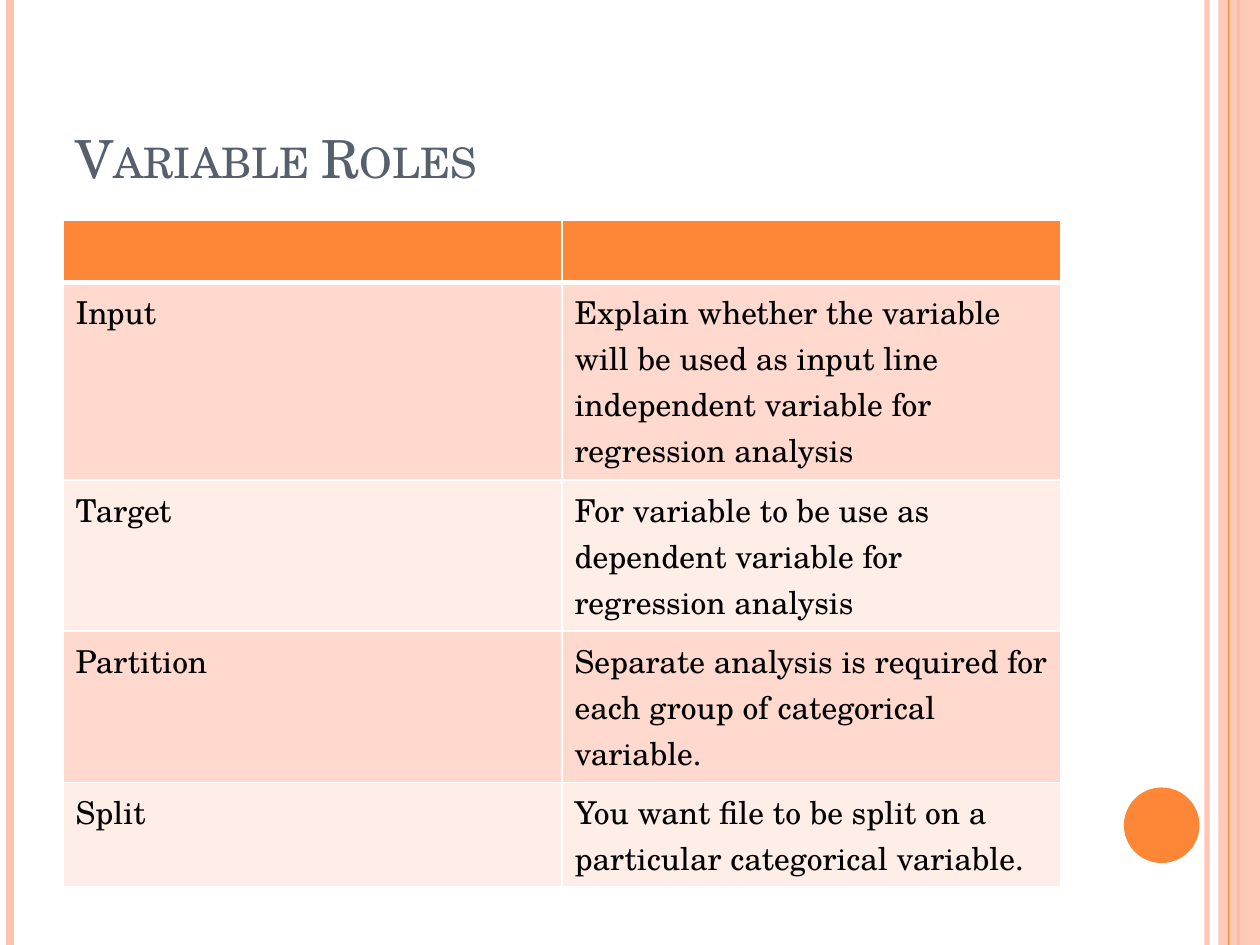
from pptx import Presentation
from pptx.dml.color import RGBColor
from pptx.enum.shapes import MSO_CONNECTOR, MSO_SHAPE
from pptx.enum.text import MSO_ANCHOR
from pptx.oxml.ns import qn
from pptx.util import Inches, Pt
from lxml import etree

STRAIGHT = MSO_CONNECTOR.STRAIGHT
RECTANGLE = MSO_SHAPE.RECTANGLE
OVAL = MSO_SHAPE.OVAL
BOTTOM = MSO_ANCHOR.BOTTOM

ORANGE = RGBColor(0xFE, 0x86, 0x37)
PEACH = RGBColor(0xFE, 0xC3, 0xAE)
BAND_DARK = RGBColor(0xFF, 0xD9, 0xCE)
BAND_LIGHT = RGBColor(0xFF, 0xED, 0xE8)
SLATE = RGBColor(0x57, 0x5F, 0x6D)
BLACK = RGBColor(0, 0, 0)
WHITE = RGBColor(0xFF, 0xFF, 0xFF)

ROLES = [
    ("Input", "Explain whether the variable will be used as input line "
              "independent variable for regression analysis"),
    ("Target", "For variable to be use as dependent variable for regression analysis"),
    ("Partition", "Separate analysis is required for each group of categorical variable."),
    ("Split", "You want file to be split on a particular categorical variable."),
]
HEADER_HEIGHT = 0.49
ROLE_HEIGHTS = [1.57, 1.2, 1.2, 0.83]


def set_alpha(element, percent):
    """Make the solid colour inside an element partly transparent."""
    color = element.find(".//" + qn("a:srgbClr"))
    etree.SubElement(color, qn("a:alpha")).set("val", str(percent * 1000))


class SlideBuilder:
    font = "TeX Gyre Schola"

    def __init__(self, page, height):
        self.page = page
        self.height = height

    def vertical_line(self, x, color, width, alpha=100):
        line = self.page.shapes.add_connector(
            STRAIGHT, Inches(x), 0, Inches(x), self.height)
        line.line.color.rgb = color
        line.line.width = Pt(width)
        properties = line._element.spPr
        etree.SubElement(properties, qn("a:effectLst"))
        if alpha < 100:
            set_alpha(properties, alpha)

    def shape(self, kind, left, top, width, height, color, alpha=100):
        shape = self.page.shapes.add_shape(
            kind, Inches(left), Inches(top), Inches(width), Inches(height))
        shape.shadow.inherit = False
        shape.fill.solid()
        shape.fill.fore_color.rgb = color
        shape.line.fill.background()
        if alpha < 100:
            set_alpha(shape._element.spPr, alpha)

    def style_text(self, frame, size, color):
        for para in frame.paragraphs:
            for span in para.runs:
                span.font.name = self.font
                span.font.size = Pt(size)
                span.font.color.rgb = color

    def title(self, text, left, top, width, height):
        box = self.page.shapes.add_textbox(
            Inches(left), Inches(top), Inches(width), Inches(height))
        frame = box.text_frame
        frame.word_wrap = True
        frame.vertical_anchor = BOTTOM
        frame.text = text
        self.style_text(frame, 30, SLATE)
        frame.paragraphs[0].runs[0].font._element.set("cap", "small")

    def cell_borders(self, cell, bottom_width):
        """Draw white borders; they must come before the fill in the XML."""
        properties = cell._tc.get_or_add_tcPr()
        widths = {"a:lnL": 1, "a:lnR": 1, "a:lnT": 1, "a:lnB": bottom_width}
        for side, width in widths.items():
            border = etree.SubElement(properties, qn(side))
            border.set("w", str(Pt(width)))
            fill = etree.SubElement(border, qn("a:solidFill"))
            etree.SubElement(fill, qn("a:srgbClr")).set("val", str(WHITE))

    def table(self, rows, left, top, column_width, row_heights):
        """Add a banded table whose first row is the header."""
        columns = len(rows[0])
        table = self.page.shapes.add_table(
            len(rows), columns, Inches(left), Inches(top),
            Inches(column_width * columns), Inches(sum(row_heights))).table
        for column in table.columns:
            column.width = Inches(column_width)
        for row, height in zip(table.rows, row_heights):
            row.height = Inches(height)

        for row_index, texts in enumerate(rows):
            is_header = row_index == 0
            band = BAND_DARK if row_index % 2 else BAND_LIGHT
            for column_index, text in enumerate(texts):
                cell = table.cell(row_index, column_index)
                self.cell_borders(cell, 3 if is_header else 1)
                cell.fill.solid()
                cell.fill.fore_color.rgb = ORANGE if is_header else band
                if text:
                    cell.text_frame.text = text
                    self.style_text(cell.text_frame, 18, BLACK)


def main():
    deck = Presentation()
    deck.slide_width = Inches(10)
    deck.slide_height = Inches(7.5)
    page = deck.slides.add_slide(deck.slide_layouts[6])
    builder = SlideBuilder(page, deck.slide_height)

    builder.vertical_line(9.58, PEACH, 3, alpha=93)
    builder.vertical_line(0.08, PEACH, 4.5)
    builder.vertical_line(9.83, ORANGE, 1.5)
    builder.shape(RECTANGLE, 9.67, 0, 0.33, 7.5, PEACH, alpha=87)
    builder.vertical_line(9.75, ORANGE, 0.75)
    builder.shape(OVAL, 8.92, 6.25, 0.6, 0.6, ORANGE)

    builder.title("Variable Roles", 0.5, 0.3, 8.17, 1.25)
    builder.table([("", "")] + ROLES, 0.5, 1.75, column_width=3.96,
                  row_heights=[HEADER_HEIGHT] + ROLE_HEIGHTS)
    deck.save("out.pptx")


if __name__ == "__main__":
    main()
